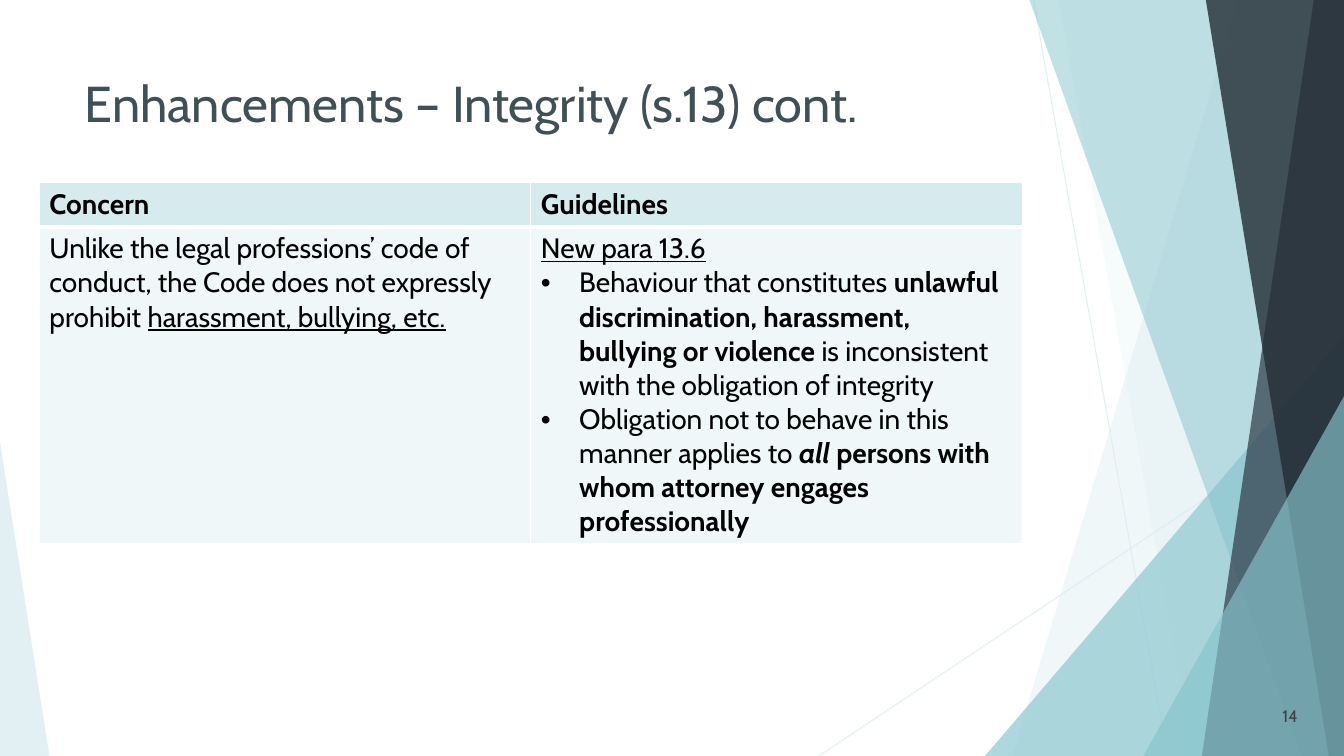
"""Build the slide on integrity enhancements: title, two-column table and faceted side art."""
from dataclasses import dataclass

from lxml.etree import SubElement
from pptx import Presentation
from pptx.dml.color import RGBColor as Rgb
from pptx.enum.shapes import MSO_CONNECTOR as Link, MSO_SHAPE as Preset
from pptx.enum.text import MSO_ANCHOR as Anchor, PP_ALIGN as Align
from pptx.oxml.ns import qn
from pptx.util import Inches, Pt


@dataclass(frozen=True)
class Theme:
    font: str = "Cabin"
    pale: str = "D6EBEE"
    teal: str = "86C4CD"
    slate: str = "2E3B46"
    night: str = "232C34"
    body_fill: str = "F0F7F8"
    border: str = "FFFFFF"
    title: str = "415057"
    text: str = "000000"
    number: str = "404040"
    title_size: int = 36
    table_size: int = 20
    number_size: int = 12


THEME = Theme()
WIDTH, HEIGHT = 13.33, 7.5

TITLE = "Enhancements – Integrity (s.13) cont."
PAGE = "14"
HEADINGS = ["Concern", "Guidelines"]
CONCERN = [
    (False, [("Unlike the legal professions’ code of conduct, the Code does not expressly prohibit ", ""),
             ("harassment, bullying, etc.", "u")]),
]
GUIDELINES = [
    (False, [("New para 13.6", "u")]),
    (True, [("Behaviour that constitutes ", ""),
            ("unlawful discrimination, harassment, bullying or violence", "b"),
            (" is inconsistent with the obligation of integrity", "")]),
    (True, [("Obligation not to behave in this manner applies to ", ""),
            ("all", "bi"),
            (" persons with whom attorney engages professionally", "b")]),
]
ROWS = [
    (0.43, THEME.pale, [[(False, [(heading, "b")])] for heading in HEADINGS]),
    (3.14, THEME.body_fill, [CONCERN, GUIDELINES]),
]
TABLE_LEFT, TABLE_TOP, COLUMN = 0.39, 1.81, 4.875
INDENT = 0.38

RAYS = [((10.25, 0), (11.58, HEIGHT)), ((WIDTH, 4.03), (8.12, HEIGHT))]
FACETS = [
    ("band", 12.28, 10.04, THEME.pale, 36),
    ("band", 10.5, 11.83, THEME.pale, 20),
    ("peak", (9.77, 3.33, 3.56, 4.17), 1, THEME.teal, 66),
    ("band", 10.21, 12.91, THEME.teal, 50),
    ("band", 13.03, 11.92, THEME.slate, 70),
    ("band", 11.96, 13.18, THEME.night, 80),
    ("peak", (11.34, 3.93, 1.99, 3.57), 1, THEME.teal, 66),
    ("peak", (0, 4.39, 0.49, 3.11), 0, THEME.pale, 70),
]


def set_opacity(part, percent):
    for color in part.element.iter(qn("a:srgbClr")):
        SubElement(color, qn("a:alpha"), val=str(percent * 1000))


def add_text(paragraph, text, size, color, marks=""):
    run = paragraph.add_run()
    run.text = text
    font = run.font
    font.name, font.size = THEME.font, Pt(size)
    font.color.rgb = Rgb.from_string(color)
    font.bold, font.italic, font.underline = (mark in marks for mark in "biu")


def add_ray(art, start, end):
    ray = art.shapes.add_connector(Link.STRAIGHT, *map(Inches, start + end))
    ray.line.color.rgb = Rgb.from_string(THEME.pale)
    ray.line.width = Pt(0.75)
    set_opacity(ray, 70)
    SubElement(ray.element.spPr, qn("a:effectLst"))


def add_facet(art, kind, place, slant, color, opacity):
    if kind == "band":
        outline = art.shapes.build_freeform(Inches(place), 0, scale=1.0)
        corners = [(WIDTH, 0), (WIDTH, HEIGHT), (slant, HEIGHT)]
        outline.add_line_segments([(Inches(x), Inches(y)) for x, y in corners], close=True)
        facet = outline.convert_to_shape()
    else:
        facet = art.shapes.add_shape(Preset.ISOSCELES_TRIANGLE, *map(Inches, place))
        facet.adjustments[0] = slant
    facet.shadow.inherit = False
    facet.line.fill.background()
    facet.fill.solid()
    facet.fill.fore_color.rgb = Rgb.from_string(color)
    set_opacity(facet, opacity)


def add_bullet(paragraph):
    properties = paragraph._p.get_or_add_pPr()
    properties.set("marL", str(Inches(INDENT)))
    properties.set("indent", str(-Inches(INDENT)))
    SubElement(properties, qn("a:buFont"), typeface="Arial")
    SubElement(properties, qn("a:buChar"), char="•")


def set_borders(cell, thick_side):
    properties = cell._tc.get_or_add_tcPr()
    for side in "LRTB":
        width = Pt(3 if side == thick_side else 1)
        edge = SubElement(properties, qn(f"a:ln{side}"), w=str(width))
        SubElement(SubElement(edge, qn("a:solidFill")), qn("a:srgbClr"), val=THEME.border)


def fill_cell(cell, paragraphs, color, thick_side):
    set_borders(cell, thick_side)
    cell.fill.solid()
    cell.fill.fore_color.rgb = Rgb.from_string(color)
    frame = cell.text_frame
    for index, (bulleted, runs) in enumerate(paragraphs):
        paragraph = frame.add_paragraph() if index else frame.paragraphs[0]
        if bulleted:
            add_bullet(paragraph)
        for text, marks in runs:
            add_text(paragraph, text, THEME.table_size, THEME.text, marks)


def add_comparison(slide):
    total = sum(height for height, _, _ in ROWS)
    table = slide.shapes.add_table(
        len(ROWS), len(HEADINGS), Inches(TABLE_LEFT), Inches(TABLE_TOP),
        Inches(COLUMN * len(HEADINGS)), Inches(total)).table
    table.horz_banding = False
    for column in table.columns:
        column.width = Inches(COLUMN)
    for row, (height, color, contents) in enumerate(ROWS):
        table.rows[row].height = Inches(height)
        for column, paragraphs in enumerate(contents):
            fill_cell(table.cell(row, column), paragraphs, color, "T" if row else "B")


def add_title(slide):
    title = slide.shapes.title
    title.left, title.top, title.width, title.height = map(Inches, (0.74, 0.67, 9.4, 0.99))
    title.text_frame.vertical_anchor = Anchor.TOP
    heading = title.text_frame.paragraphs[0]
    heading.alignment = Align.LEFT
    add_text(heading, TITLE, THEME.title_size, THEME.title)
    slide.shapes.element.append(title.element)


def add_page_number(slide):
    frame = slide.shapes.add_textbox(*map(Inches, (12.22, 6.9, 0.75, 0.4))).text_frame
    frame.word_wrap = True
    frame.vertical_anchor = Anchor.MIDDLE
    number = frame.paragraphs[0]
    number.alignment = Align.RIGHT
    add_text(number, PAGE, THEME.number_size, THEME.number)


def main():
    deck = Presentation()
    deck.slide_width, deck.slide_height = Inches(WIDTH), Inches(HEIGHT)
    slide = deck.slides.add_slide(deck.slide_layouts[5])
    art = slide.shapes.add_group_shape()
    for start, end in RAYS:
        add_ray(art, start, end)
    for facet in FACETS:
        add_facet(art, *facet)
    add_title(slide)
    add_comparison(slide)
    add_page_number(slide)
    deck.save("out.pptx")


if __name__ == "__main__":
    main()
